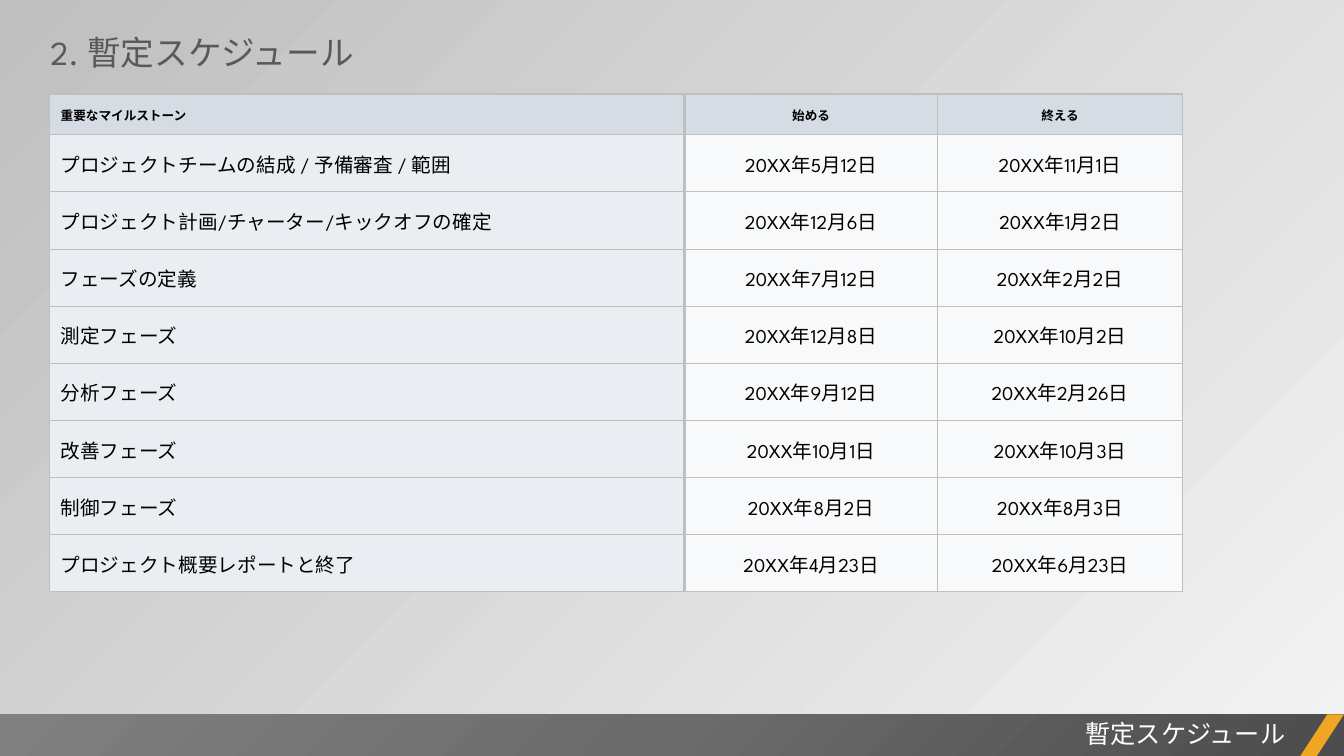
from pptx import Presentation
from pptx.dml.color import RGBColor
from pptx.enum.shapes import MSO_SHAPE
from pptx.enum.text import MSO_ANCHOR, MSO_AUTO_SIZE, PP_ALIGN
from pptx.oxml import parse_xml
from pptx.oxml.ns import nsdecls
from pptx.util import Cm, Pt

FONT = "League Spartan"
BORDER_COLOR = "BFBFBF"
HEADER_FILL = "D6DCE4"
MILESTONE_FILL = "EAEEF3"
DATE_FILL = "F7F9FB"

SLIDE_WIDTH, SLIDE_HEIGHT = 33.87, 19.05
FOOTER_TOP, FOOTER_HEIGHT = 18, 1.05
COLUMN_WIDTHS = (16, 6.38, 6.17)
HEADER_HEIGHT, ROW_HEIGHT = 1.02, 1.44

SCHEDULE = [
    ("重要なマイルストーン", "始める", "終える"),
    ("プロジェクトチームの結成 / 予備審査 / 範囲", "20XX年5月12日", "20XX年11月1日"),
    ("プロジェクト計画/チャーター/キックオフの確定", "20XX年12月6日", "20XX年1月2日"),
    ("フェーズの定義", "20XX年7月12日", "20XX年2月2日"),
    ("測定フェーズ", "20XX年12月8日", "20XX年10月2日"),
    ("分析フェーズ", "20XX年9月12日", "20XX年2月26日"),
    ("改善フェーズ", "20XX年10月1日", "20XX年10月3日"),
    ("制御フェーズ", "20XX年8月2日", "20XX年8月3日"),
    ("プロジェクト概要レポートと終了", "20XX年4月23日", "20XX年6月23日"),
]


def rgb(color):
    return RGBColor.from_string(color)


def write_text(text_frame, text, size, color="000000", bold=False, align=PP_ALIGN.LEFT):
    paragraph = text_frame.paragraphs[0]
    paragraph.alignment = align
    run = paragraph.add_run()
    run.text = text
    run.font.name = FONT
    run.font.size = Pt(size)
    run.font.bold = bold
    run.font.color.rgb = rgb(color)


def add_text_box(slide, text, left, top, width, height, wrap=True, **text_format):
    box = slide.shapes.add_textbox(Cm(left), Cm(top), Cm(width), Cm(height))
    box.text_frame.word_wrap = wrap
    box.text_frame.auto_size = MSO_AUTO_SIZE.SHAPE_TO_FIT_TEXT
    write_text(box.text_frame, text, **text_format)


def add_plain_shape(slide, kind, left, top, width, height, color):
    shape = slide.shapes.add_shape(kind, Cm(left), Cm(top), Cm(width), Cm(height))
    shape.shadow.inherit = False
    shape.fill.solid()
    shape.fill.fore_color.rgb = rgb(color)
    shape.line.fill.background()
    return shape


def set_background(slide):
    fill = slide.background.fill
    fill.gradient()
    fill.gradient_angle = 135
    for stop, position, color in zip(fill.gradient_stops, (0, 1), ("F2F2F2", "BFBFBF")):
        stop.position = position
        stop.color.rgb = rgb(color)


def set_corner_gradient(shape, stops):
    """Replace the solid fill by a gradient spreading from the bottom right corner."""
    stop_xml = "".join(
        f'<a:gs pos="{percent * 1000}"><a:srgbClr val="{color}"/></a:gs>'
        for percent, color in stops
    )
    gradient = parse_xml(
        f'<a:gradFill {nsdecls("a")} rotWithShape="1"><a:gsLst>{stop_xml}</a:gsLst>'
        '<a:path path="circle"><a:fillToRect l="100000" t="100000"/></a:path></a:gradFill>'
    )
    properties = shape.fill._xPr
    properties.replace(properties.find("{*}solidFill"), gradient)


def add_footer(slide, text):
    bar = add_plain_shape(slide, MSO_SHAPE.RECTANGLE, 0, FOOTER_TOP,
                          SLIDE_WIDTH, FOOTER_HEIGHT, "6B6B6B")
    set_corner_gradient(bar, [(0, "4C4C4C"), (50, "6B6B6B"), (100, "808080")])
    accent_width = 1.1
    accent = add_plain_shape(slide, MSO_SHAPE.PARALLELOGRAM, SLIDE_WIDTH - accent_width,
                             FOOTER_TOP, accent_width, FOOTER_HEIGHT, "F0A622")
    accent.adjustments[0] = 0.65
    add_text_box(slide, text, 13.34, 17.98, 19.3, 1.03,
                 size=18, color="FFFFFF", align=PP_ALIGN.RIGHT)


def set_borders(cell, left, right, top, bottom):
    """Draw the four cell borders, with widths in points."""
    properties = cell._tc.get_or_add_tcPr()
    widths = {"lnL": left, "lnR": right, "lnT": top, "lnB": bottom}
    for index, (tag, width) in enumerate(widths.items()):
        properties.insert(index, parse_xml(
            f'<a:{tag} {nsdecls("a")} w="{Pt(width)}"><a:solidFill>'
            f'<a:srgbClr val="{BORDER_COLOR}"/></a:solidFill></a:{tag}>'
        ))


def format_cell(cell, text, row, column):
    is_header, is_milestone = row == 0, column == 0
    cell.vertical_anchor = MSO_ANCHOR.MIDDLE
    cell.margin_left = Cm(0.28 if is_milestone else 0.03)
    cell.margin_right = cell.margin_top = Cm(0.03)
    cell.margin_bottom = 0
    write_text(cell.text_frame, text, size=9 if is_header else 14, bold=is_header,
               align=PP_ALIGN.LEFT if is_milestone else PP_ALIGN.CENTER)
    cell.fill.solid()
    body_fill = MILESTONE_FILL if is_milestone else DATE_FILL
    cell.fill.fore_color.rgb = rgb(HEADER_FILL if is_header else body_fill)
    set_borders(cell, left=2 if column == 1 else 0.5, right=2 if is_milestone else 0.5,
                top=1.5 if is_header else 0.5, bottom=0.5)


def add_schedule_table(slide, left, top):
    heights = [HEADER_HEIGHT] + [ROW_HEIGHT] * (len(SCHEDULE) - 1)
    table = slide.shapes.add_table(len(heights), len(COLUMN_WIDTHS), Cm(left), Cm(top),
                                   Cm(sum(COLUMN_WIDTHS)), Cm(sum(heights))).table
    table.first_row = table.horz_banding = False
    for column, width in zip(table.columns, COLUMN_WIDTHS):
        column.width = Cm(width)
    for row, height in zip(table.rows, heights):
        row.height = Cm(height)
    for row_index, texts in enumerate(SCHEDULE):
        for column_index, text in enumerate(texts):
            format_cell(table.cell(row_index, column_index), text, row_index, column_index)


def main():
    presentation = Presentation()
    presentation.slide_width = Cm(SLIDE_WIDTH)
    presentation.slide_height = Cm(SLIDE_HEIGHT)
    slide = presentation.slides.add_slide(presentation.slide_layouts[6])
    set_background(slide)
    add_text_box(slide, "2. 暫定スケジュール", 1.02, 0.69, 9.98, 1.27,
                 wrap=False, size=24, color="595959")
    add_footer(slide, "暫定スケジュール")
    add_schedule_table(slide, 1.25, 2.37)
    presentation.save("out.pptx")


if __name__ == "__main__":
    main()
